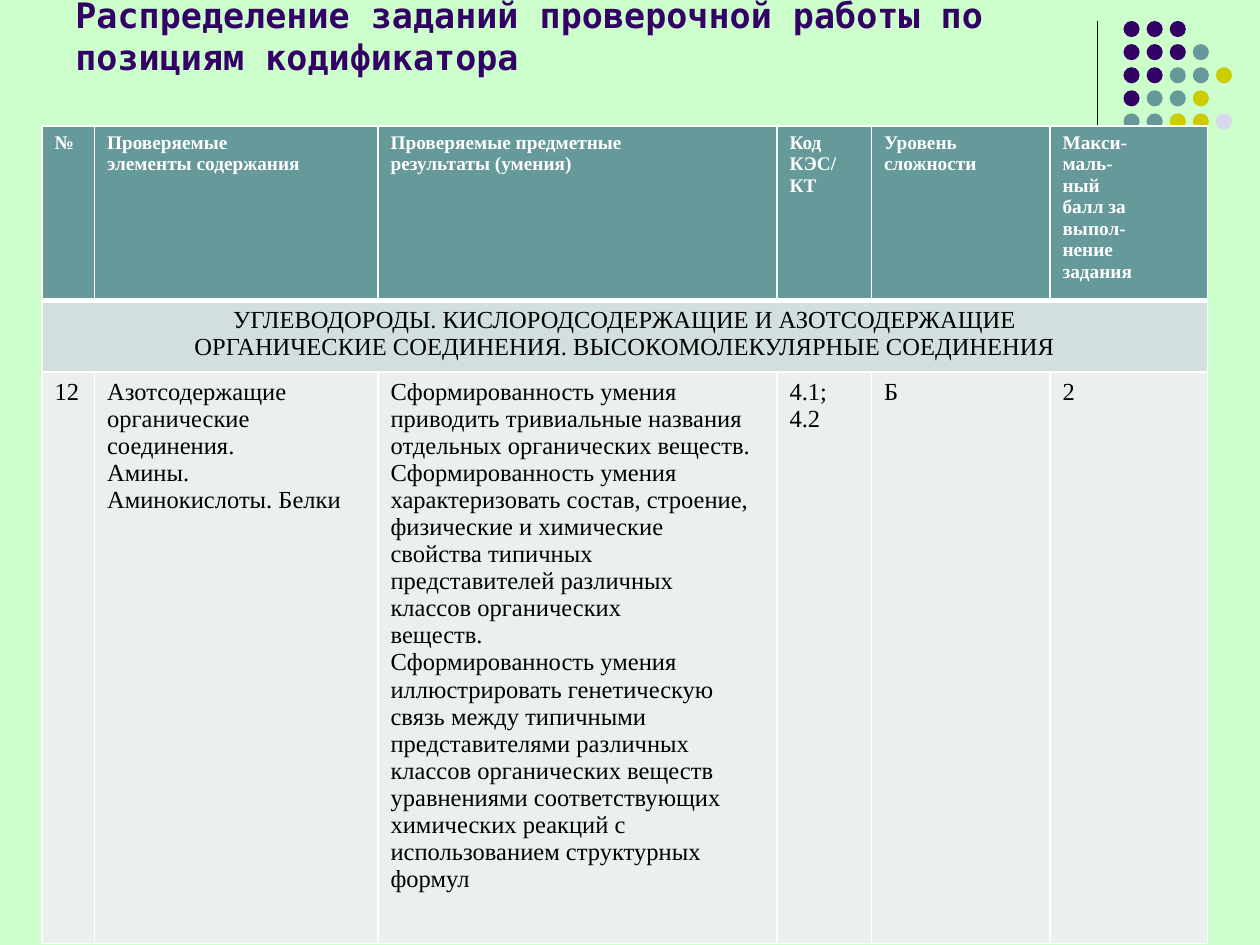
from copy import deepcopy
from dataclasses import dataclass
from typing import NamedTuple

from lxml.etree import SubElement
from pptx import Presentation
from pptx.dml.color import RGBColor
from pptx.enum.shapes import MSO_CONNECTOR, MSO_SHAPE
from pptx.enum.text import MSO_ANCHOR, PP_ALIGN
from pptx.oxml import parse_xml
from pptx.oxml.ns import nsdecls, qn
from pptx.util import Pt

COLOURS = {
    "background": "CCFFCC",
    "violet": "330066",
    "teal": "669999",
    "olive": "CCCC00",
    "lilac": "D8D8EC",
    "section": "D3DEDE",
    "body": "EAEFEF",
    "white": "FFFFFF",
    "black": "000000",
}
HEADER_FONT = {"name": "Times New Roman", "size": Pt(11), "bold": True}
BODY_FONT = {"name": "Times New Roman", "size": Pt(14), "bold": False}
TITLE_FONT = {"name": "DejaVu Sans Mono", "size": Pt(20), "bold": True}

# Dot pattern: one letter per dot, one string per row
DOT_ROWS = ["VVV", "VVVT", "VVTTO", "VTTO", "TTOOL"]
DOT_COLOURS = {"V": "violet", "T": "teal", "O": "olive", "L": "lilac"}
DOT_LEFT, DOT_TOP, DOT_PITCH, DOT_SIZE = 642, 12, 13.2, 9.2


class Box(NamedTuple):
    left: float
    top: float
    width: float
    height: float


@dataclass
class RowStyle:
    fill: str
    text: str
    font: dict
    bottom: float = 1
    align: PP_ALIGN = PP_ALIGN.LEFT


TITLE_BOX = Box(36, 10, 594, 38)
ROW_HEIGHT = 29.5  # least height: rows grow with their text
COLUMN_WIDTHS = [30, 162, 228, 54, 102, 90]
ROW_STYLES = [
    RowStyle("teal", "white", HEADER_FONT, bottom=3),
    RowStyle("section", "black", BODY_FONT, align=PP_ALIGN.CENTER),
    RowStyle("body", "black", BODY_FONT),
]
TABLE_BOX = Box(24, 72, sum(COLUMN_WIDTHS), ROW_HEIGHT * len(ROW_STYLES))

# Each cell is a list of paragraphs; \v is a line break
HEADINGS = [
    ["№"],
    ["Проверяемые", "элементы содержания"],
    ["Проверяемые предметные", "результаты (умения)"],
    ["Код", "КЭС/", "КТ"],
    ["Уровень", "сложности"],
    ["Макси-", "маль-", "ный", "балл за", "выпол-", "нение", "задания"],
]
SECTION = [
    [
        "УГЛЕВОДОРОДЫ. КИСЛОРОДСОДЕРЖАЩИЕ И АЗОТСОДЕРЖАЩИЕ",
        "ОРГАНИЧЕСКИЕ СОЕДИНЕНИЯ. ВЫСОКОМОЛЕКУЛЯРНЫЕ СОЕДИНЕНИЯ",
    ]
]
TASK = [
    ["12"],
    ["Азотсодержащие органические соединения.", "Амины.\vАминокислоты. Белки"],
    [
        "Сформированность умения приводить тривиальные названия отдельных "
        "органических веществ. Сформированность умения характеризовать состав, "
        "строение, физические и химические\vсвойства типичных\v"
        "представителей различных",
        "классов органических\vвеществ.",
        "Сформированность умения иллюстрировать генетическую связь между типичными "
        "представителями различных классов органических веществ уравнениями "
        "соответствующих химических реакций с использованием структурных формул",
    ],
    ["4.1;", "4.2"],
    ["Б"],
    ["2"],
]


def rgb(name: str) -> RGBColor:
    return RGBColor.from_string(COLOURS[name])


def write(frame, paragraphs: list[str], font: dict, colour: str, align=PP_ALIGN.LEFT) -> None:
    frame.text = "\n".join(paragraphs)
    for paragraph in frame.paragraphs:
        paragraph.alignment = align
        for run in paragraph.runs:
            for key, value in font.items():
                setattr(run.font, key, value)
            run.font.color.rgb = rgb(colour)
        # Line breaks take the format of the text around them
        for line_break in paragraph._p.findall(qn("a:br")):
            line_break.append(deepcopy(paragraph.runs[0]._r.rPr))


def set_borders(cell, widths: dict[str, float]) -> None:
    properties = cell._tc.get_or_add_tcPr()
    for index, (side, width) in enumerate(widths.items()):
        border = parse_xml(
            f'<a:ln{side} {nsdecls("a")} w="{Pt(width)}"><a:solidFill>'
            f'<a:srgbClr val="{COLOURS["white"]}"/></a:solidFill></a:ln{side}>'
        )
        properties.insert(index, border)


def draw_dots(slide) -> None:
    for row, dots in enumerate(DOT_ROWS):
        for column, letter in enumerate(dots):
            dot = slide.shapes.add_shape(
                MSO_SHAPE.OVAL,
                Pt(DOT_LEFT + column * DOT_PITCH),
                Pt(DOT_TOP + row * DOT_PITCH),
                Pt(DOT_SIZE),
                Pt(DOT_SIZE),
            )
            dot.shadow.inherit = False
            dot.fill.solid()
            dot.fill.fore_color.rgb = rgb(DOT_COLOURS[letter])
            dot.line.fill.background()


def draw_rule(slide) -> None:
    rule = slide.shapes.add_connector(
        MSO_CONNECTOR.STRAIGHT, Pt(627), Pt(12), Pt(627), Pt(132)
    )
    rule.line.color.rgb = rgb("black")
    rule.line.width = Pt(0.75)
    SubElement(rule._element.spPr, qn("a:effectLst"))


def draw_title(slide) -> None:
    title = slide.shapes.add_textbox(*map(Pt, TITLE_BOX)).text_frame
    title.word_wrap = True
    title.vertical_anchor = MSO_ANCHOR.BOTTOM
    text = "Распределение заданий проверочной работы по позициям кодификатора"
    write(title, [text], TITLE_FONT, "violet")


def draw_table(slide) -> None:
    contents = [HEADINGS, SECTION, TASK]
    table = slide.shapes.add_table(
        len(contents), len(COLUMN_WIDTHS), *map(Pt, TABLE_BOX)
    ).table
    for column, width in zip(table.columns, COLUMN_WIDTHS):
        column.width = Pt(width)
    # The section heading spans every column
    table.cell(1, 0).merge(table.cell(1, len(COLUMN_WIDTHS) - 1))
    for row, style, texts in zip(table.rows, ROW_STYLES, contents):
        for cell in row.cells:
            cell.fill.solid()
            cell.fill.fore_color.rgb = rgb(style.fill)
            set_borders(cell, {"L": 1, "R": 1, "T": 1, "B": style.bottom})
        for cell, paragraphs in zip(row.cells, texts):
            write(cell.text_frame, paragraphs, style.font, style.text, style.align)


def main() -> None:
    presentation = Presentation()
    presentation.slide_width, presentation.slide_height = Pt(720), Pt(540)
    slide = presentation.slides.add_slide(presentation.slide_layouts[6])
    slide.background.fill.solid()
    slide.background.fill.fore_color.rgb = rgb("background")
    # Decoration lies behind the title and the table
    draw_rule(slide)
    draw_dots(slide)
    draw_title(slide)
    draw_table(slide)
    presentation.save("out.pptx")


if __name__ == "__main__":
    main()
